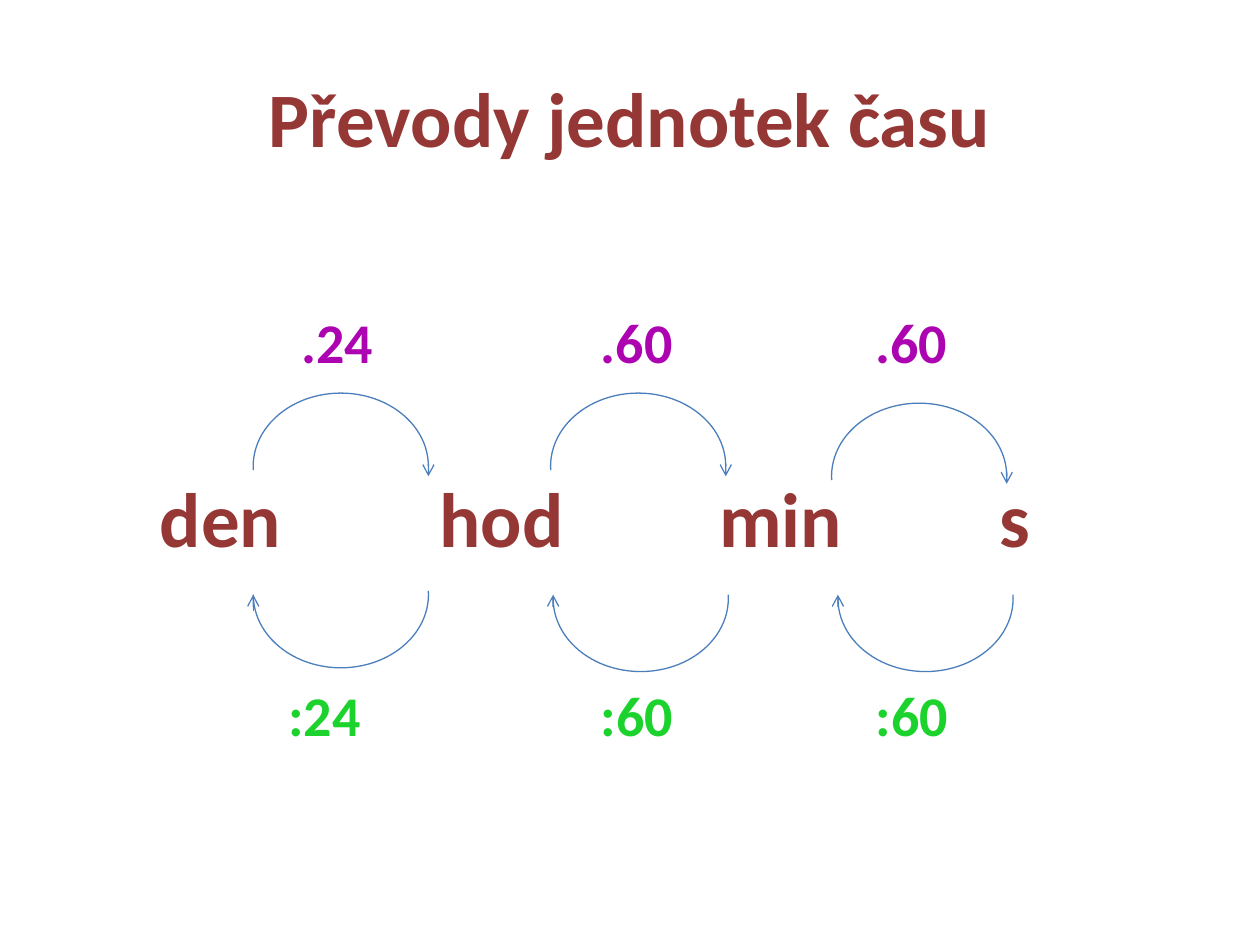
from lxml import etree
from pptx import Presentation
from pptx.dml.color import RGBColor
from pptx.enum.shapes import MSO_CONNECTOR, MSO_SHAPE
from pptx.enum.text import MSO_ANCHOR, PP_ALIGN
from pptx.oxml.ns import qn
from pptx.util import Inches, Pt

ARC, STRAIGHT = MSO_SHAPE.ARC, MSO_CONNECTOR.STRAIGHT
LEFT, CENTER, MIDDLE = PP_ALIGN.LEFT, PP_ALIGN.CENTER, MSO_ANCHOR.MIDDLE

COLORS = {"heading": "953735", "multiply": "AC04B0", "divide": "1CD22D", "line": "4B7EBC"}
COLUMNS, ROWS = 100, 75
ARC_WIDTH, ARC_HEIGHT = 13.9, 11.6
ARC_START = 106.44

UNITS = ["den", "hod", "min", "s"]
UNIT_LEFT, UNIT_STEP = 12.7, 22.2

# Label, label column, arc column, arc row, arrow start row, arrow tip row
MULTIPLY = [
    (".24", 23.9, 20.1, 31.2, 37, 37.8),
    (".60", 47.7, 43.7, 31.2, 37, 37.8),
    (".60", 69.5, 66, 32, 37.8, 38.4),
]
DIVIDE = [
    (":24", 22.9, 20.1, 41.4, 48.5, 47.2),
    (":60", 47.7, 43.9, 41.7, 47.5, 47.2),
    (":60", 69.5, 66.5, 41.7, 47.5, 47.2),
]


class SlideBuilder:
    """Draws on one slide, with lengths in grid columns and rows."""

    def __init__(self):
        self.deck = Presentation()
        self.deck.slide_width, self.deck.slide_height = Inches(10), Inches(7.5)
        self.page = self.deck.slides.add_slide(self.deck.slide_layouts[6])

    def x(self, columns):
        return round(self.deck.slide_width * columns / COLUMNS)

    def y(self, rows):
        return round(self.deck.slide_height * rows / ROWS)

    def text(self, words, column, row, width, height, size, color, align=LEFT):
        box = self.page.shapes.add_textbox(
            self.x(column), self.y(row), self.x(width), self.y(height))
        frame_format = {"word_wrap": True, "vertical_anchor": MIDDLE, "margin_left": 0,
                        "margin_right": 0, "margin_top": 0, "margin_bottom": 0}
        for name, value in frame_format.items():
            setattr(box.text_frame, name, value)
        para = box.text_frame.paragraphs[0]
        para.alignment = align
        span = para.add_run()
        span.text = words
        for name, value in {"name": "Calibri", "size": Pt(size), "bold": True}.items():
            setattr(span.font, name, value)
        span.font.color.rgb = RGBColor.from_string(COLORS[color])

    def stroke(self, line):
        line.color.rgb = RGBColor.from_string(COLORS["line"])
        line.width = Pt(0.75)

    def arc(self, column, row, rotation):
        arc = self.page.shapes.add_shape(
            ARC, self.x(column), self.y(row), self.x(ARC_WIDTH), self.y(ARC_HEIGHT))
        arc.adjustments[0], arc.adjustments[1] = ARC_START, 0
        arc.rotation = rotation
        arc.shadow.inherit = False
        arc.fill.background()
        self.stroke(arc.line)

    def arrow(self, column, start, tip):
        arrow = self.page.shapes.add_connector(
            STRAIGHT, self.x(column), self.y(start), self.x(column), self.y(tip))
        self.stroke(arrow.line)
        etree.SubElement(arrow.line._get_or_add_ln(), qn("a:tailEnd"), type="arrow")
        etree.SubElement(arrow._element.spPr, qn("a:effectLst"))

    def conversions(self, steps, label_row, color, rotation):
        # Upper arcs end on the right, turned ones on the left
        tip_offset = 0 if rotation else ARC_WIDTH
        for label, label_column, column, row, start, tip in steps:
            self.text(label, label_column, label_row, 10, 6, 32, color)
            self.arc(column, row, rotation)
            self.arrow(column + tip_offset, start, tip)


def main():
    builder = SlideBuilder()

    # Title
    builder.text("Převody jednotek času", 5, 3, 90, 12.5, 44, "heading", CENTER)

    # Row of time units
    for index, unit in enumerate(UNITS):
        builder.text(unit, UNIT_LEFT + index * UNIT_STEP, 37, 14, 8, 44, "heading")

    # Conversions to smaller units above, to larger units below
    builder.conversions(MULTIPLY, 24.1, "multiply", 0)
    builder.conversions(DIVIDE, 53.7, "divide", 180)

    builder.deck.save("out.pptx")


if __name__ == "__main__":
    main()
